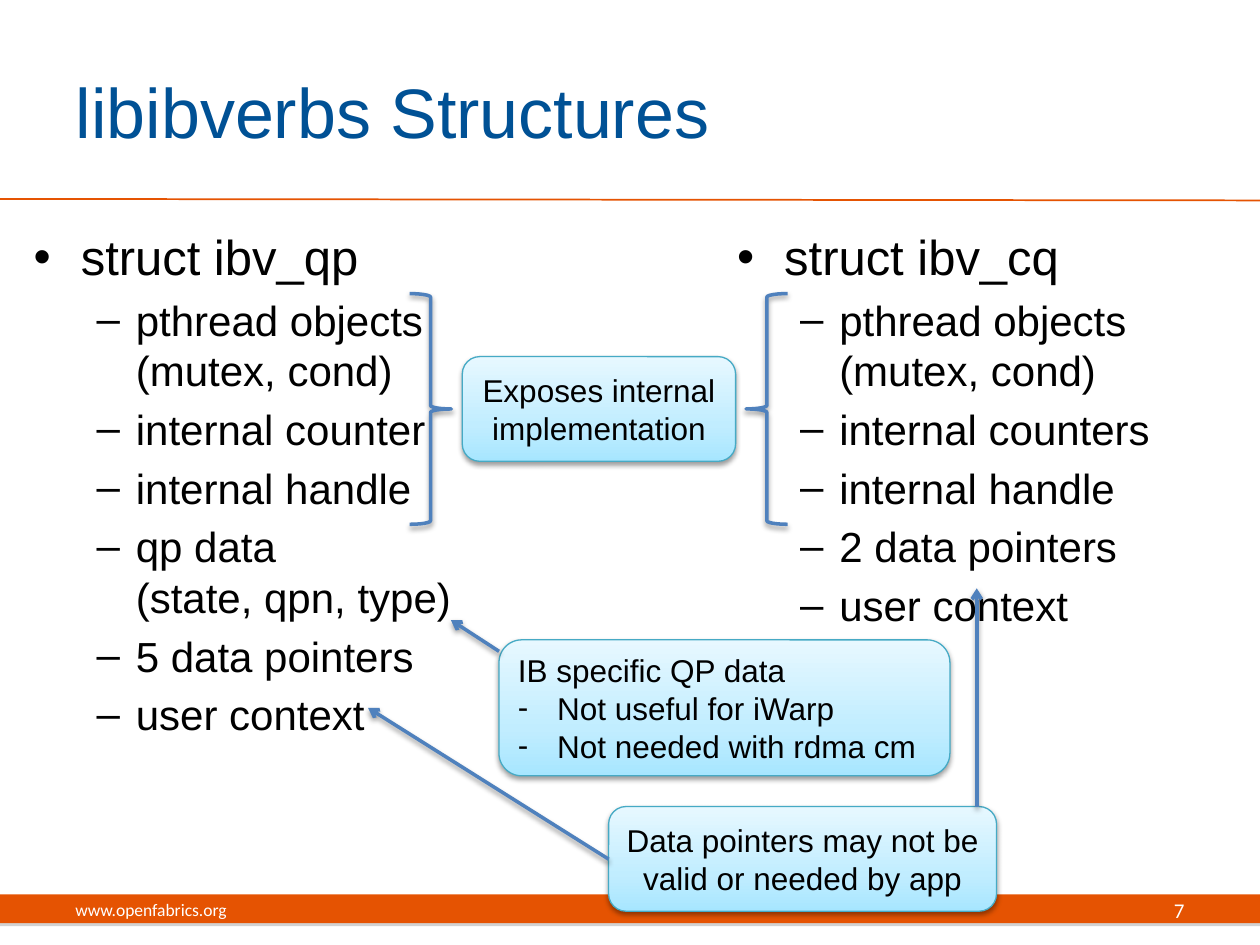
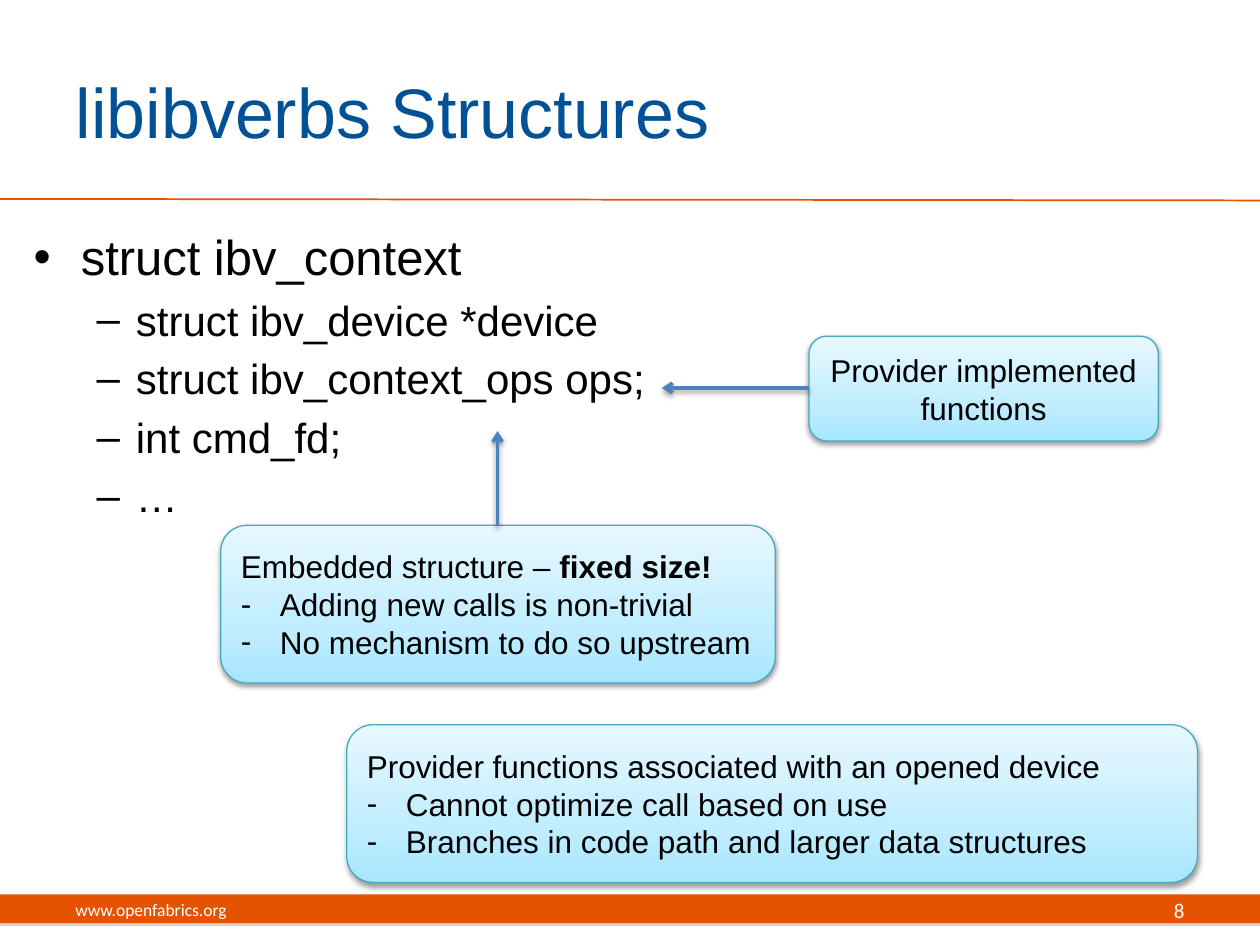
from copy import deepcopy

from lxml import etree
from pptx import Presentation
from pptx import util as u
from pptx.dml import color
from pptx.enum import shapes, text
from pptx.oxml import ns

COLORS = {
    "title": "005195",
    "text": "000000",
    "band": "E55302",
    "band_text": "FFFFFF",
    "band_shadow": "808080",
    "shadow": "000000",
    "callout_line": "46AAC5",
    "arrow": "4F81BD",
}
CALLOUT_STOPS = [(0, "A7E6FF"), (0.35, "C1EDFF"), (1, "E7F8FF")]
FONTS = {
    "title": {"name": "Arial", "size": u.Pt(40), "color": "title"},
    "heading": {"name": "Arial", "size": u.Pt(28), "color": "text"},
    "item": {"name": "Arial", "size": u.Pt(24), "color": "text"},
    "callout": {"name": "Arial", "size": u.Pt(18), "color": "text"},
    "address": {"name": "Calibri", "size": u.Pt(10), "color": "band_text"},
    "number": {"name": "Calibri", "size": u.Pt(12), "color": "band_text"},
}
BULLETS = {
    "heading": ("•", 0.95, 0.95),
    "item": ("–", 2.06, 0.79),
    "callout": ("-", 0.79, 0.79),
}
ITEM_SPACE = u.Pt(4.8)
BODY_TOP, BODY_HEIGHT = 4.45, 12.57
BRACE_TOP, BRACE_WIDTH, BRACE_HEIGHT = 5.92, 0.84, 4.65
TITLE = "libibverbs Structures"


def rgb(name):
    return color.RGBColor.from_string(COLORS[name])


def cm(*lengths):
    return [u.Cm(length) for length in lengths]


def add_child(parent, tag, **attributes):
    child = etree.SubElement(parent, ns.qn(tag))
    for name, value in attributes.items():
        child.set(name, str(value))
    return child


class Deck:
    def __init__(self):
        self.presentation = Presentation()
        self.presentation.slide_width = u.Cm(25.4)
        self.presentation.slide_height = u.Cm(19.05)
        self.slide = None

    def start_slide(self, title, number):
        layout = self.presentation.slide_layouts.get_by_name("Title Only")
        self.slide = self.presentation.slides.add_slide(layout)
        self.band()
        self.connector((0, 4.01), (25.4, 4.04), "band", 1)
        self.title(title)
        self.label("www.openfabrics.org", "address", 1.27, 8.05, text.PP_ALIGN.LEFT)
        self.label(str(number), "number", 18.21, 5.92, text.PP_ALIGN.RIGHT)

    def shadow(self, shape, name="shadow", alpha=38, blur=3.1, distance=1.6):
        properties = shape._element.spPr
        effects = properties.find(ns.qn("a:effectLst"))
        outer = add_child(effects, "a:outerShdw", blurRad=u.Pt(blur), dist=u.Pt(distance),
                          dir=5400000, rotWithShape=0)
        shade = add_child(outer, "a:srgbClr", val=COLORS[name])
        add_child(shade, "a:alpha", val=alpha * 1000)

    def shape(self, kind, box):
        shape = self.slide.shapes.add_shape(kind, *cm(*box))
        shape.shadow.inherit = False
        return shape

    def outline(self, shape, name, width):
        shape.line.color.rgb = rgb(name)
        shape.line.width = u.Pt(width)

    def band(self):
        shape = self.shape(shapes.MSO_SHAPE.RECTANGLE, (0, 18.03, 25.4, 0.58))
        shape.fill.solid()
        shape.fill.fore_color.rgb = rgb("band")
        shape.line.fill.background()
        self.shadow(shape, "band_shadow", 35, 0, 1.8)

    def frame(self, shape, anchor):
        frame = shape.text_frame
        settings = {"word_wrap": True, "auto_size": text.MSO_AUTO_SIZE.NONE,
                    "vertical_anchor": anchor}
        for name, value in settings.items():
            setattr(frame, name, value)
        return frame

    def paragraph(self, paragraph, content, style, align=text.PP_ALIGN.LEFT, bold_end=""):
        paragraph.text = content
        paragraph.alignment = align
        if bold_end:
            run = paragraph.add_run()
            run.text = bold_end
            run.font.bold = True
        for run in paragraph.runs:
            for name, value in FONTS[style].items():
                if name == "color":
                    run.font.color.rgb = rgb(value)
                else:
                    setattr(run.font, name, value)

    def bullet(self, paragraph, style):
        mark, indent, hanging = BULLETS[style]
        properties = paragraph._p.get_or_add_pPr()
        properties.set("marL", str(u.Cm(indent)))
        properties.set("indent", str(-u.Cm(hanging)))
        add_child(properties, "a:buFont", typeface="Arial")
        add_child(properties, "a:buChar", char=mark)

    def title(self, content):
        shape = self.slide.shapes.title
        shape.left, shape.top, shape.width, shape.height = cm(1.27, 0.64, 20.75, 3.18)
        frame = self.frame(shape, text.MSO_ANCHOR.MIDDLE)
        self.paragraph(frame.paragraphs[0], content, "title")

    def label(self, content, style, left, width, align):
        shape = self.slide.shapes.add_textbox(*cm(left, 17.83, width, 1.02))
        frame = self.frame(shape, text.MSO_ANCHOR.MIDDLE)
        self.paragraph(frame.paragraphs[0], content, style, align)

    def structure(self, left, width, heading, items):
        shape = self.slide.shapes.add_textbox(*cm(left, BODY_TOP, width, BODY_HEIGHT))
        frame = self.frame(shape, text.MSO_ANCHOR.TOP)
        self.paragraph(frame.paragraphs[0], heading, "heading")
        self.bullet(frame.paragraphs[0], "heading")
        for item in items:
            paragraph = frame.add_paragraph()
            self.paragraph(paragraph, item, "item")
            paragraph.space_before = ITEM_SPACE
            self.bullet(paragraph, "item")

    def callout(self, box, heading, points=(), bold_end=""):
        shape = self.shape(shapes.MSO_SHAPE.ROUNDED_RECTANGLE, box)
        self.outline(shape, "callout_line", 0.75)
        shape.fill.gradient()
        shape.fill.gradient_angle = 90
        first_stop = shape._element.spPr.find(".//" + ns.qn("a:gs"))
        first_stop.addnext(deepcopy(first_stop))
        for stop, (position, value) in zip(shape.fill.gradient_stops, CALLOUT_STOPS):
            stop.position = position
            stop.color.rgb = color.RGBColor.from_string(value)
        self.shadow(shape)
        frame = self.frame(shape, text.MSO_ANCHOR.MIDDLE)
        align = text.PP_ALIGN.LEFT if points else text.PP_ALIGN.CENTER
        self.paragraph(frame.paragraphs[0], heading, "callout", align, bold_end)
        for point in points:
            paragraph = frame.add_paragraph()
            self.paragraph(paragraph, point, "callout")
            self.bullet(paragraph, "callout")

    def brace(self, kind, left):
        shape = self.shape(kind, (left, BRACE_TOP, BRACE_WIDTH, BRACE_HEIGHT))
        shape.fill.background()
        self.outline(shape, "arrow", 2)
        self.shadow(shape)

    def connector(self, start, end, name, width):
        line = self.slide.shapes.add_connector(
            shapes.MSO_CONNECTOR.STRAIGHT, *cm(*start, *end))
        self.outline(line, name, width)
        add_child(line._element.spPr, "a:effectLst")
        return line

    def arrow(self, start, end):
        line = self.connector(start, end, "arrow", 2)
        add_child(line._element.spPr.find(ns.qn("a:ln")), "a:tailEnd", type="arrow")
        self.shadow(line)


def add_queue_structures(deck):
    deck.start_slide(TITLE, 7)
    deck.structure(0.43, 11.63, "struct ibv_qp", [
        "pthread objects\v(mutex, cond)", "internal counter", "internal handle",
        "qp data\v(state, qpn, type)", "5 data pointers", "user context"])
    deck.structure(14.61, 9.96, "struct ibv_cq", [
        "pthread objects (mutex, cond)", "internal counters", "internal handle",
        "2 data pointers", "user context"])
    deck.callout((9.32, 7.19, 5.51, 2.11), "Exposes internal implementation")
    deck.callout((10.06, 12.9, 9.09, 2.74), "IB specific QP data",
                 ["Not useful for iWarp", "Not needed with rdma cm"])
    deck.brace(shapes.MSO_SHAPE.RIGHT_BRACE, 8.26)
    deck.brace(shapes.MSO_SHAPE.LEFT_BRACE, 15.04)
    deck.arrow((10.06, 13.13), (9.09, 12.5))
    deck.callout((12.27, 16.26, 7.82, 2.11),
                 "Data pointers may not be valid or needed by app")
    deck.arrow((12.27, 17.32), (7.42, 14.27))
    deck.arrow((19.69, 16.26), (19.69, 11.86))


def add_context_structure(deck):
    deck.start_slide(TITLE, 8)
    deck.structure(0.43, 13.34, "struct ibv_context", [
        "struct ibv_device *device", "struct ibv_context_ops ops;", "int cmd_fd;", "…"])
    deck.callout((16.31, 6.78, 7.04, 2.11), "Provider implemented functions")
    deck.arrow((16.31, 7.82), (13.34, 7.82))
    deck.callout((4.45, 10.59, 11.18, 3.18), "Embedded structure – ",
                 ["Adding new calls is non-trivial", "No mechanism to do so upstream"],
                 bold_end="fixed size!")
    deck.arrow((10.03, 10.59), (10.03, 8.69))
    deck.callout((6.99, 14.61, 17.15, 3.18),
                 "Provider functions associated with an opened device",
                 ["Cannot optimize call based on use",
                  "Branches in code path and larger data structures"])


def main():
    deck = Deck()
    add_queue_structures(deck)
    add_context_structure(deck)
    deck.presentation.save("out.pptx")


if __name__ == "__main__":
    main()
